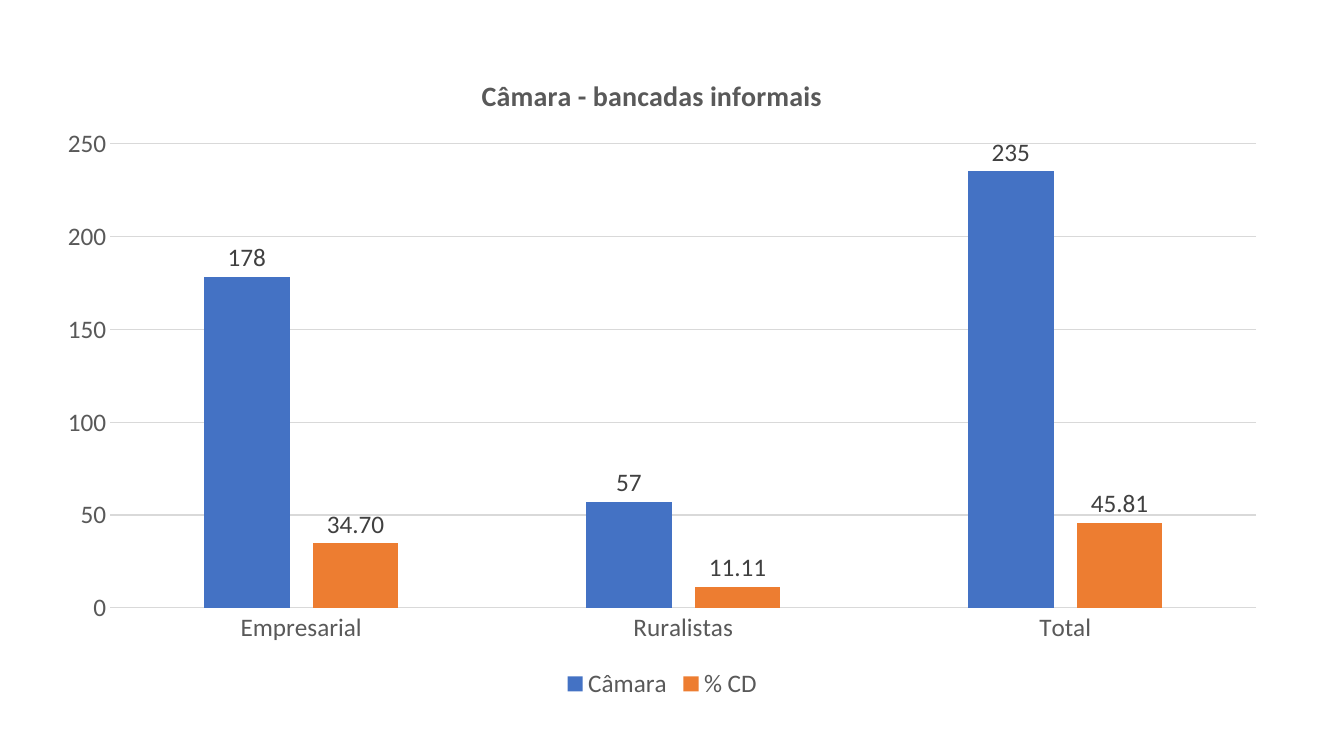
from lxml import etree
from pptx import Presentation
from pptx.chart.data import CategoryChartData
from pptx.dml.color import RGBColor
from pptx.enum.chart import (XL_CHART_TYPE, XL_LABEL_POSITION,
                             XL_LEGEND_POSITION, XL_TICK_MARK)
from pptx.oxml.ns import qn
from pptx.util import Pt

COLUMNS = XL_CHART_TYPE.COLUMN_CLUSTERED
OUTSIDE = XL_LABEL_POSITION.OUTSIDE_END
BOTTOM = XL_LEGEND_POSITION.BOTTOM
NO_TICK = XL_TICK_MARK.NONE

FONT = "Calibri"
COLORS = {"text": "595959", "label": "404040", "grid": "D9D9D9",
          "Câmara": "4472C4", "% CD": "ED7D31"}
CATEGORIES = ["Empresarial", "Ruralistas", "Total"]
# name: (values, number format)
SERIES = {"Câmara": ([178, 57, 235], "General"),
          "% CD": ([34.7, 11.11, 45.81], "0.00")}


def rgb(name):
    return RGBColor.from_string(COLORS[name])


def format_font(font, size=18, color="text", bold=False):
    font.name = FONT
    font.size = Pt(size)
    font.bold = bold
    font.color.rgb = rgb(color)


def add_text(tf, text, **fmt):
    r = tf.paragraphs[0].add_run()
    r.text = text
    format_font(r.font, **fmt)


def format_line(line):
    line.color.rgb = rgb("grid")
    line.width = Pt(0.75)


def set_layout(parent, index, **values):
    """Place a chart part by fractions of the chart's size."""
    for old in parent.findall(qn("c:layout")):
        parent.remove(old)
    layout = etree.Element(qn("c:layout"))
    manual = etree.SubElement(layout, qn("c:manualLayout"))
    for tag, val in values.items():
        etree.SubElement(manual, qn("c:" + tag)).set("val", str(val))
    parent.insert(index, layout)


def add_title(chart, text):
    chart.has_title = True
    title = chart.chart_title
    add_text(title.text_frame, text, size=20, bold=True)
    title.include_in_layout = False
    set_layout(title._element, 1, xMode="edge", yMode="edge", x=0.35, y=0.045)


def format_axes(chart):
    for axis in (chart.category_axis, chart.value_axis):
        axis.major_tick_mark = axis.minor_tick_mark = NO_TICK
        format_font(axis.tick_labels.font)
    chart.category_axis.has_major_gridlines = False
    format_line(chart.category_axis.format.line)
    axis = chart.value_axis
    axis.minimum_scale, axis.maximum_scale, axis.major_unit = 0, 250, 50
    axis.format.line.fill.background()
    format_line(axis.major_gridlines.format.line)


def format_series(series):
    series.format.fill.solid()
    series.format.fill.fore_color.rgb = rgb(series.name)
    series.invert_if_negative = False
    labels = series.data_labels
    labels.show_value = True
    labels.position = OUTSIDE
    labels.number_format = SERIES[series.name][1]
    labels.number_format_is_linked = False
    format_font(labels.font, color="label")


def add_legend(chart):
    chart.has_legend = True
    chart.legend.position = BOTTOM
    chart.legend.include_in_layout = False
    format_font(chart.legend.font)


def add_column_chart(s, left, top, width, height):
    data = CategoryChartData()
    data.categories = CATEGORIES
    for name, (values, number_format) in SERIES.items():
        data.add_series(name, values, number_format)
    frame = s.shapes.add_chart(COLUMNS, Pt(left), Pt(top), Pt(width),
                               Pt(height), data)
    chart = frame.chart
    format_font(chart.font)
    add_title(chart, "Câmara - bancadas informais")
    add_legend(chart)
    format_axes(chart)
    plot = chart.plots[0]
    plot.gap_width, plot.overlap = 219, -27
    plot.vary_by_categories = False
    for series in plot.series:
        format_series(series)
    plot_area = chart._chartSpace.chart.plotArea
    set_layout(plot_area, 0, layoutTarget="inner", xMode="edge", yMode="edge",
               x=0.054, y=0.155, w=0.926, h=0.7)


def main():
    prs = Presentation()
    prs.slide_width, prs.slide_height = Pt(960), Pt(540)
    s = prs.slides.add_slide(prs.slide_layouts[6])
    add_column_chart(s, 31, 29, 884, 474)
    prs.save("out.pptx")


if __name__ == "__main__":
    main()
